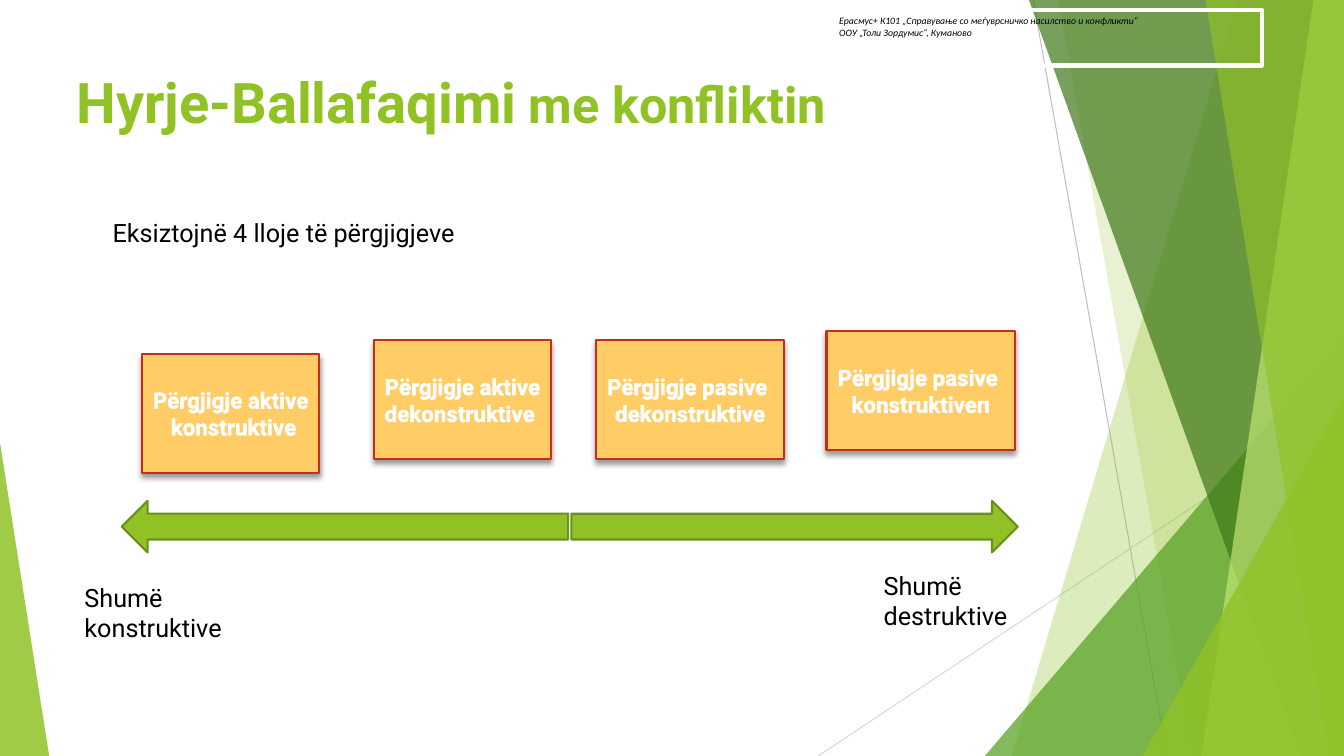
import lxml.etree
import pptx
import pptx.dml.color
import pptx.enum.shapes
import pptx.enum.text
import pptx.oxml
import pptx.oxml.ns
import pptx.util

Cm = pptx.util.Cm
Pt = pptx.util.Pt
SHAPE = pptx.enum.shapes.MSO_SHAPE
ANCHOR = pptx.enum.text.MSO_ANCHOR
ALIGN = pptx.enum.text.PP_ALIGN
NAMESPACE = pptx.oxml.ns.nsdecls("a")
WIDTH, HEIGHT = 33.87, 19.05

# Theme: colours and text styles
THEME = {
    "green": "90C226", "mid green": "54A021", "dark green": "3F7819",
    "pale green": "C0E474", "arrow edge": "6B901C", "card": "FFCC66",
    "card edge": "C42F1A", "white": "FFFFFF", "black": "000000",
    "grey": "BFBFBF", "light grey": "D9D9D9",
    "title": ("green", {"name": "Roboto", "size": Pt(40), "bold": True}),
    "title end": ("green", {"name": "Roboto", "size": Pt(36), "bold": True}),
    "body": ("black", {"name": "Roboto", "size": Pt(18)}),
    "card text": ("white", {"name": "Roboto", "size": Pt(16), "bold": True}),
    "header": ("black", {"name": "Calibri", "size": Pt(7), "italic": True}),
}


def paint(shape, fill=None, line=None, line_width=0, opacity=100):
    """Set fill, line and opacity, and drop the inherited shadow."""
    shape.shadow.inherit = False
    if fill:
        shape.fill.solid()
        shape.fill.fore_color.rgb = pptx.dml.color.RGBColor.from_string(THEME[fill])
    else:
        shape.fill.background()
    if line:
        shape.line.color.rgb = pptx.dml.color.RGBColor.from_string(THEME[line])
        shape.line.width = Pt(line_width)
    else:
        shape.line.fill.background()
    if opacity < 100:
        colour = shape._element.xpath("./p:spPr/a:solidFill/a:srgbClr")[0]
        lxml.etree.SubElement(colour, pptx.oxml.ns.qn("a:alpha"), val=str(opacity * 1000))


def write(shape, paragraphs, alignment=ALIGN.LEFT, **frame_format):
    """Fill a shape with paragraphs, each a list of (text, style) runs."""
    frame = shape.text_frame
    values = {"word_wrap": True, "vertical_anchor": ANCHOR.TOP,
              "auto_size": pptx.enum.text.MSO_AUTO_SIZE.NONE} | frame_format
    for name, value in values.items():
        setattr(frame, name, value)
    for index, runs in enumerate(paragraphs):
        paragraph = frame.add_paragraph() if index else frame.paragraphs[0]
        paragraph.alignment = alignment
        for text, style in runs:
            run = paragraph.add_run()
            run.text = text
            colour, font_format = THEME[style]
            for name, value in font_format.items():
                setattr(run.font, name, value)
            run.font.color.rgb = pptx.dml.color.RGBColor.from_string(THEME[colour])


presentation = pptx.Presentation()
presentation.slide_width, presentation.slide_height = Cm(WIDTH), Cm(HEIGHT)
slide = presentation.slides.add_slide(presentation.slide_layouts[5])
shapes = slide.shapes
title = shapes.title

# Thin background lines
for start_x, start_y, end_x, colour in [
    (26.04, 0, 29.41, "grey"),
    (WIDTH, 10.24, 20.62, "light grey"),
]:
    connector = shapes.add_connector(
        pptx.enum.shapes.MSO_CONNECTOR.STRAIGHT,
        Cm(start_x), Cm(start_y), Cm(end_x), Cm(HEIGHT))
    connector.line.color.rgb = pptx.dml.color.RGBColor.from_string(THEME[colour])
    connector.line.width = Pt(0.75)
    lxml.etree.SubElement(connector._element.spPr, pptx.oxml.ns.qn("a:effectLst"))

# Green facets: bands (top x, bottom x) reach the right edge,
# triangles (left, top, width, apex) stand on the bottom edge
for geometry, colour, opacity in [
    ((31.19, 25.5), "green", 30),
    ((26.67, 30.05), "green", 20),
    ((24.82, 8.46, 9.05, 1), "mid green", 72),
    ((25.93, 32.79), "dark green", 70),
    ((33.1, 30.28), "pale green", 70),
    ((30.38, 33.48), "green", 65),
    ((28.8, 9.98, 5.07, 1), "green", 80),
    ((0, 11.15, 1.24, 0), "green", 85),
]:
    if len(geometry) == 2:
        top_x, bottom_x = geometry
        builder = shapes.build_freeform(Cm(top_x), 0)
        builder.add_line_segments([
            (Cm(WIDTH), 0), (Cm(WIDTH), Cm(HEIGHT)), (Cm(bottom_x), Cm(HEIGHT))])
        facet = builder.convert_to_shape()
    else:
        left, top, width, apex = geometry
        facet = shapes.add_shape(SHAPE.ISOSCELES_TRIANGLE, Cm(left), Cm(top),
                                 Cm(width), Cm(HEIGHT - top))
        facet.adjustments[0] = apex
    paint(facet, colour, opacity=opacity)

# Project header
header = shapes.add_shape(SHAPE.RECTANGLE, Cm(20.9), Cm(0.25), Cm(10.9), Cm(1.4))
paint(header, line="white", line_width=3)
write(header, [
    [("Ерасмус+ К101 „Справување со меѓуврсничко насилство и конфликти“", "header")],
    [("OOУ „Толи Зордумис“, Куманово", "header")],
])

# Title, brought in front of the background
shapes._spTree.append(title._element)
title.left, title.top, title.width, title.height = Cm(1.68), Cm(1.57), Cm(23.88), Cm(3.66)
write(title, [[("Hyrje-Ballafaqimi", "title"), (" me konfliktin", "title end")]])

# Double arrow made of two halves
for left, rotation in [(3.07, 0), (14.4, 180)]:
    arrow = shapes.add_shape(SHAPE.LEFT_ARROW, Cm(left), Cm(12.62), Cm(11.25), Cm(1.3))
    arrow.rotation = rotation
    paint(arrow, "green", "arrow edge", 1.5)

# Introduction and labels at the arrow ends
for text, left, top, width, height in [
    ("Eksiztojnë 4 lloje të përgjigjeve", 2.59, 5.36, 20.98, 1.02),
    ("Shumë konstruktive", 1.88, 14.55, 5.31, 1.8),
    ("Shumë destruktive", 22.02, 14.25, 4.57, 1.8),
]:
    label = shapes.add_textbox(Cm(left), Cm(top), Cm(width), Cm(height))
    write(label, [[(text, "body")]])

# Response cards with soft shadow and outlined letters
for lines, left, top, width in [
    (("Përgjigje aktive", " konstruktive"), 3.58, 8.91, 4.47),
    (("Përgjigje aktive", "dekonstruktive "), 9.42, 8.57, 4.47),
    (("Përgjigje pasive ", "dekonstruktive"), 15.02, 8.57, 4.74),
    (("Përgjigje pasive ", "konstruktiveп"), 20.83, 8.34, 4.74),
]:
    card = shapes.add_shape(SHAPE.RECTANGLE, Cm(left), Cm(top), Cm(width), Cm(3))
    paint(card, "card", "card edge", 1.5)
    write(card, [[(line, "card text")] for line in lines], ALIGN.CENTER,
          word_wrap=False, vertical_anchor=ANCHOR.MIDDLE)
    card._element.xpath("./p:spPr/a:effectLst")[0].append(pptx.oxml.parse_xml(
        f'<a:outerShdw {NAMESPACE} blurRad="{Pt(4)}" dist="{Pt(3)}" dir="5400000" rotWithShape="0">'
        f'<a:srgbClr val="{THEME["black"]}"><a:alpha val="40000"/></a:srgbClr></a:outerShdw>'))
    for run_properties in card._element.xpath(".//a:rPr"):
        run_properties.insert(0, pptx.oxml.parse_xml(
            f'<a:ln {NAMESPACE} w="{Pt(1.06)}"><a:solidFill>'
            f'<a:srgbClr val="{THEME["white"]}"/></a:solidFill></a:ln>'))

presentation.save("out.pptx")
